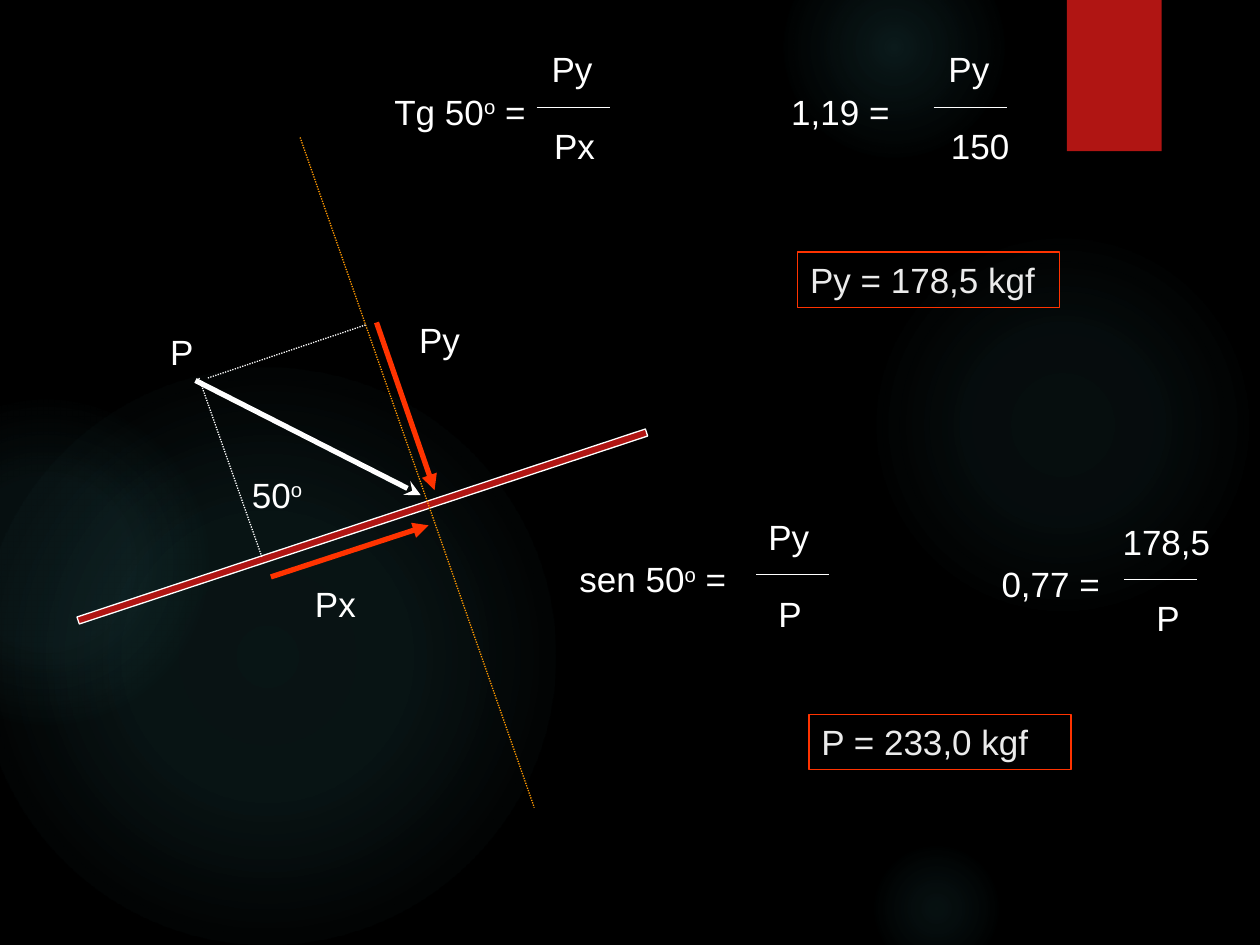
from dataclasses import dataclass
from typing import Optional

from lxml.etree import SubElement
from pptx import Presentation
from pptx.dml.color import RGBColor as RGB
from pptx.enum.dml import MSO_LINE
from pptx.enum.shapes import MSO_CONNECTOR as CONN, MSO_SHAPE as SHAPE
from pptx.enum.text import MSO_ANCHOR as ANCHOR, PP_ALIGN as ALIGN
from pptx.oxml import parse_xml
from pptx.oxml.ns import nsdecls, qn
from pptx.util import Cm, Pt


@dataclass(frozen=True)
class Theme:
    back: RGB = RGB.from_string("000000")
    text: RGB = RGB.from_string("FFFFFF")
    result: RGB = RGB.from_string("EBEBEB")
    red: RGB = RGB.from_string("B01513")
    force: RGB = RGB.from_string("FF3300")
    normal: RGB = RGB.from_string("FF9900")
    glow: str = "50B9C1"
    font: str = "Arial"
    size: Pt = Pt(20)
    thin: Pt = Pt(0.75)
    thick: Pt = Pt(3)


T = Theme()


@dataclass(frozen=True)
class Glow:
    left: float
    top: float
    size: float
    stops: tuple  # (position %, opacity %)


@dataclass(frozen=True)
class Label:
    text: str  # "^o" marks a raised o
    left: float
    top: float
    width: float = 1.7


@dataclass(frozen=True)
class Line:
    start: tuple
    end: tuple
    color: RGB = T.text
    width: Pt = T.thin
    dotted: bool = False
    arrow: Optional[str] = None


@dataclass(frozen=True)
class Equation:
    lhs: Label
    num: Label
    den: Label
    bar: tuple  # left end of the fraction bar


GLOWS = [
    Glow(17.5, 4.65, 7.82, ((0, 7), (36, 6), (69, 0))),
    Glow(15.8, -1.27, 4.45, ((0, 14), (36, 7), (73, 0))),
    Glow(17.5, 16.94, 2.74, ((0, 9), (36, 5), (66, 0))),
    Glow(-0.43, 7.42, 11.63, ((0, 11), (36, 10), (75, 0))),
    Glow(-2.34, 8.05, 6.55, ((0, 8), (36, 8), (72, 0))),
]
BAR_LENGTH = 1.47
LHS_DY, NUM_DY, DEN_DY = -0.46, -1.32, 0.23  # box tops measured from the bar


def equation(lhs: str, num: str, den: str, y: float, xs: tuple,
             lhs_width: float = 4.01, num_width: float = 1.7) -> Equation:
    x_lhs, x_num, x_den, x_bar = xs
    return Equation(Label(lhs, x_lhs, y + LHS_DY, lhs_width),
                    Label(num, x_num, y + NUM_DY, num_width),
                    Label(den, x_den, y + DEN_DY), (x_bar, y))


EQUATIONS = [
    equation("Tg 50^o =", "Py", "Px", 2.16, (7.7, 10.87, 10.92, 10.82)),
    equation("1,19 =", "Py", "150", 2.16, (15.7, 18.87, 18.92, 18.82)),
    equation("sen 50^o =", "Py", "P", 11.58, (11.43, 15.24, 15.44, 15.24)),
    equation("0,77 =", "178,5", "P", 11.68, (19.94, 22.38, 23.06, 22.66), 2.79, 2.79),
]
RESULTS = [Label("Py = 178,5 kgf", 16.08, 5.08, 5.28),
           Label("P = 233,0 kgf", 16.31, 14.4, 5.28)]
DIAGRAM_LABELS = [Label("P", 3.18, 6.53), Label("50^o", 4.83, 9.42),
                  Label("Px", 6.1, 11.61), Label("Py", 8.2, 6.3)]
FORCE_P = Line((3.94, 7.67), (8.48, 9.98), width=T.thick, arrow="stealth")
DIAGRAM_LINES = [
    Line((6.05, 2.77), (10.77, 16.28), T.normal, dotted=True),
    Line((7.59, 6.5), (8.76, 9.88), T.force, T.thick, arrow="triangle"),
    Line((4.19, 7.62), (7.37, 6.55), dotted=True),
    Line((5.46, 11.63), (8.64, 10.59), T.force, T.thick, arrow="triangle"),
    Line((4.01, 7.62), (5.28, 11.23), dotted=True),
]


def write(sp, text: str, color: RGB) -> None:
    tf = sp.text_frame
    for name, value in {"word_wrap": True, "vertical_anchor": ANCHOR.TOP}.items():
        setattr(tf, name, value)
    p = tf.paragraphs[0]
    p.alignment = ALIGN.JUSTIFY
    base, mark, rest = text.partition("^o")
    for part, raised in ((base, False), ("o" if mark else "", True), (rest, False)):
        if not part:
            continue
        r = p.add_run()
        r.text = part
        for name, value in {"name": T.font, "size": T.size}.items():
            setattr(r.font, name, value)
        r.font.color.rgb = color
        if raised:
            r._r.get_or_add_rPr().set("baseline", "30000")


def add_label(shapes, label: Label) -> None:
    box = shapes.add_textbox(Cm(label.left), Cm(label.top), Cm(label.width), Cm(1.1))
    write(box, label.text, T.text)


def add_line(shapes, line: Line) -> None:
    c = shapes.add_connector(CONN.STRAIGHT, *map(Cm, line.start + line.end))
    c.line.color.rgb = line.color
    c.line.width = line.width
    if line.dotted:
        c.line.dash_style = MSO_LINE.ROUND_DOT
    if line.arrow:
        SubElement(c.line._get_or_add_ln(), qn("a:tailEnd"), type=line.arrow)
    SubElement(c._element.spPr, qn("a:effectLst"))


def add_box(shapes, kind: SHAPE, left: float, top: float, width: float, height: float,
            fill: Optional[RGB] = None, outline: Optional[RGB] = None):
    sp = shapes.add_shape(kind, Cm(left), Cm(top), Cm(width), Cm(height))
    sp.shadow.inherit = False
    if fill is None:
        sp.fill.background()
    else:
        sp.fill.solid()
        sp.fill.fore_color.rgb = fill
    if outline is None:
        sp.line.fill.background()
    else:
        sp.line.color.rgb = outline
        sp.line.width = T.thin
    return sp


def add_glow(shapes, glow: Glow) -> None:
    sp = add_box(shapes, SHAPE.OVAL, glow.left, glow.top, glow.size, glow.size)
    stops = "".join(
        f'<a:gs pos="{pos * 1000}"><a:srgbClr val="{T.glow}">'
        f'<a:alpha val="{alpha * 1000}"/></a:srgbClr></a:gs>' for pos, alpha in glow.stops)
    grad = parse_xml(
        f'<a:gradFill {nsdecls("a")}><a:gsLst>{stops}</a:gsLst><a:path path="circle">'
        '<a:fillToRect l="50000" t="50000" r="50000" b="50000"/></a:path></a:gradFill>')
    spPr = sp._element.spPr
    spPr.replace(spPr.find(qn("a:noFill")), grad)


def add_equation(shapes, eq: Equation) -> None:
    group = shapes.add_group_shape().shapes
    for label in (eq.lhs, eq.num, eq.den):
        add_label(group, label)
    x, y = eq.bar
    add_line(group, Line((x, y), (x + BAR_LENGTH, y)))


def main() -> None:
    prs = Presentation()
    prs.slide_width, prs.slide_height = Cm(25.4), Cm(19.05)
    s = prs.slides.add_slide(prs.slide_layouts[6])

    # Backdrop
    s.background.fill.solid()
    s.background.fill.fore_color.rgb = T.back
    for glow in GLOWS:
        add_glow(s.shapes, glow)
    add_box(s.shapes, SHAPE.RECTANGLE, 21.51, 0, 1.91, 3.05, T.red)

    # Equations and boxed results
    for eq in EQUATIONS:
        add_equation(s.shapes, eq)
    for res in RESULTS:
        sp = add_box(s.shapes, SHAPE.RECTANGLE, res.left, res.top, res.width, 1.12,
                     outline=T.force)
        write(sp, res.text, T.result)

    # Force diagram on the inclined bar
    diagram = s.shapes.add_group_shape().shapes
    add_line(diagram, FORCE_P)
    incline = add_box(diagram, SHAPE.RECTANGLE, 1.27, 10.54, 12.07, 0.15, T.red, T.text)
    incline.rotation = -18.3
    for line in DIAGRAM_LINES:
        add_line(diagram, line)
    for label in DIAGRAM_LABELS:
        add_label(diagram, label)

    prs.save("out.pptx")


if __name__ == "__main__":
    main()
